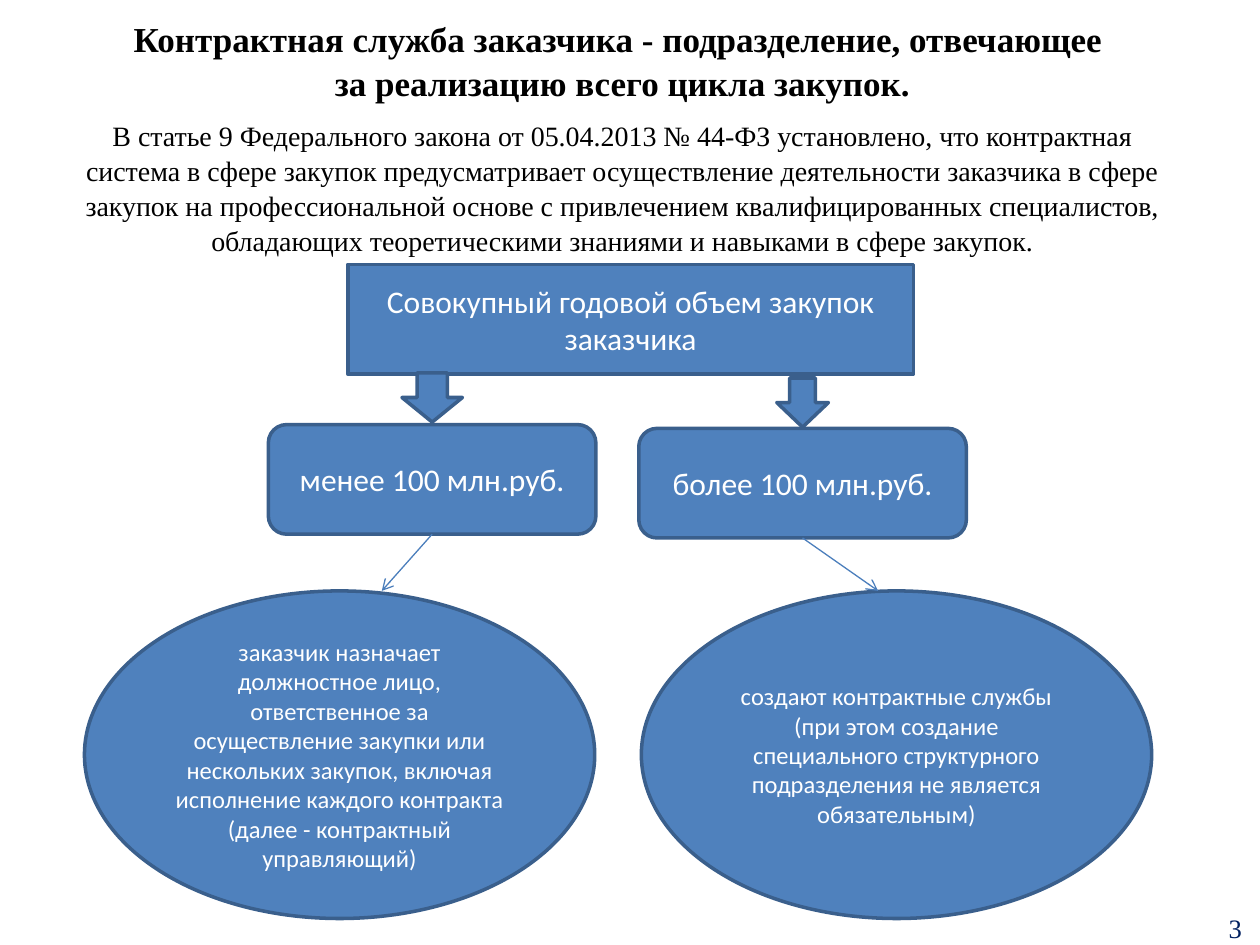
from lxml import etree
from pptx import Presentation
from pptx.dml.color import RGBColor
from pptx.enum.shapes import MSO_CONNECTOR, MSO_SHAPE
from pptx.enum.text import MSO_ANCHOR, PP_ALIGN
from pptx.oxml.ns import qn
from pptx.util import Inches, Pt

RECT, ROUND = MSO_SHAPE.RECTANGLE, MSO_SHAPE.ROUNDED_RECTANGLE
OVAL, DOWN = MSO_SHAPE.OVAL, MSO_SHAPE.DOWN_ARROW
STRAIGHT = MSO_CONNECTOR.STRAIGHT
TOP, MIDDLE, CENTER = MSO_ANCHOR.TOP, MSO_ANCHOR.MIDDLE, PP_ALIGN.CENTER

FILL, OUTLINE, LINK = "4F81BD", "3A5F8C", "4B7EBC"
WHITE, BLACK, NAVY = "FFFFFF", "000000", "002060"
SANS, SERIF = "Calibri", "Times New Roman"

TITLE = ("Контрактная служба заказчика - подразделение, отвечающее \v"
         "за реализацию всего цикла закупок.")
INTRO = ("В статье 9 Федерального закона от 05.04.2013 № 44-ФЗ установлено, что контрактная "
         "система в сфере закупок предусматривает осуществление деятельности заказчика в сфере "
         "закупок на профессиональной основе с привлечением квалифицированных специалистов, "
         "обладающих теоретическими знаниями и навыками в сфере закупок.")
VOLUME = "Совокупный годовой объем закупок заказчика"
PAGE = "3"
BRANCHES = [
    {"limit": "менее 100 млн.руб.", "left": 2.13, "top": 3.37,
     "arrow_width": 0.48, "arrow_top": 2.96,
     "outcome": "заказчик назначает должностное лицо, ответственное за осуществление закупки или "
                "нескольких закупок, включая исполнение каждого контракта "
                "(далее - контрактный управляющий)",
     "outcome_left": 0.67, "link_end": 3.03},
    {"limit": "более 100 млн.руб.", "left": 5.07, "top": 3.4,
     "arrow_width": 0.41, "arrow_top": 3.0,
     "outcome": "создают контрактные службы (при этом создание специального структурного "
                "подразделения не является обязательным)",
     "outcome_left": 5.09, "link_end": 6.97},
]
LIMIT_WIDTH, BOX_HEIGHT, ARROW_HEIGHT = 2.6, 0.87, 0.39
OUTCOME_TOP, OUTCOME_WIDTH, OUTCOME_HEIGHT = 4.69, 4.05, 2.6


def color(value):
    return RGBColor.from_string(value)


def write(holder, text, size, font, ink, anchor=MIDDLE, bold=False, spacing=1.0):
    frame = holder.text_frame
    frame.word_wrap = True
    frame.vertical_anchor = anchor
    paragraph = frame.paragraphs[0]
    paragraph.text = text
    paragraph.alignment = CENTER
    paragraph.line_spacing = spacing
    paragraph.font.size = Pt(size)
    paragraph.font.name = font
    paragraph.font.bold = bold
    paragraph.font.color.rgb = color(ink)


def add_text(slide, box, *args, **style):
    write(slide.shapes.add_textbox(*map(Inches, box)), *args, **style)


def add_block(slide, kind, box, text="", size=18):
    block = slide.shapes.add_shape(kind, *map(Inches, box))
    block.shadow.inherit = False
    block.fill.solid()
    block.fill.fore_color.rgb = color(FILL)
    block.line.color.rgb = color(OUTLINE)
    block.line.width = Pt(2)
    if text:
        write(block, text, size, SANS, WHITE)


def add_link(slide, *ends):
    link = slide.shapes.add_connector(STRAIGHT, *map(Inches, ends))
    link.line.color.rgb = color(LINK)
    link.line.width = Pt(0.75)
    etree.SubElement(link.line._get_or_add_ln(), qn("a:tailEnd"), type="arrow")
    etree.SubElement(link._element.spPr, qn("a:effectLst"))


def add_branch(slide, branch):
    left, top = branch["left"], branch["top"]
    center, width = left + LIMIT_WIDTH / 2, branch["arrow_width"]
    add_block(slide, ROUND, (left, top, LIMIT_WIDTH, BOX_HEIGHT), branch["limit"])
    add_block(slide, DOWN, (center - width / 2, branch["arrow_top"], width, ARROW_HEIGHT))
    add_block(slide, OVAL, (branch["outcome_left"], OUTCOME_TOP, OUTCOME_WIDTH, OUTCOME_HEIGHT),
              branch["outcome"], 14)
    add_link(slide, center, top + BOX_HEIGHT, branch["link_end"], OUTCOME_TOP)


def main():
    """Build the slide on the customer's contract service."""
    deck = Presentation()
    deck.slide_width, deck.slide_height = Inches(10), Inches(7.5)
    slide = deck.slides.add_slide(deck.slide_layouts[6])
    add_text(slide, (0.44, 0.13, 9, 0.69), TITLE, 20, SERIF, BLACK, bold=True, spacing=1.04)
    add_text(slide, (0.44, 0.88, 9, 1.2), INTRO, 16, SERIF, BLACK, anchor=TOP, spacing=1.04)
    add_block(slide, RECT, (2.76, 2.1, 4.49, BOX_HEIGHT), VOLUME)
    for branch in BRANCHES:
        add_branch(slide, branch)
    add_text(slide, (9.61, 7.19, 0.39, 0.31), PAGE, 15.2, SERIF, NAVY, anchor=TOP)
    deck.save("out.pptx")


if __name__ == "__main__":
    main()
